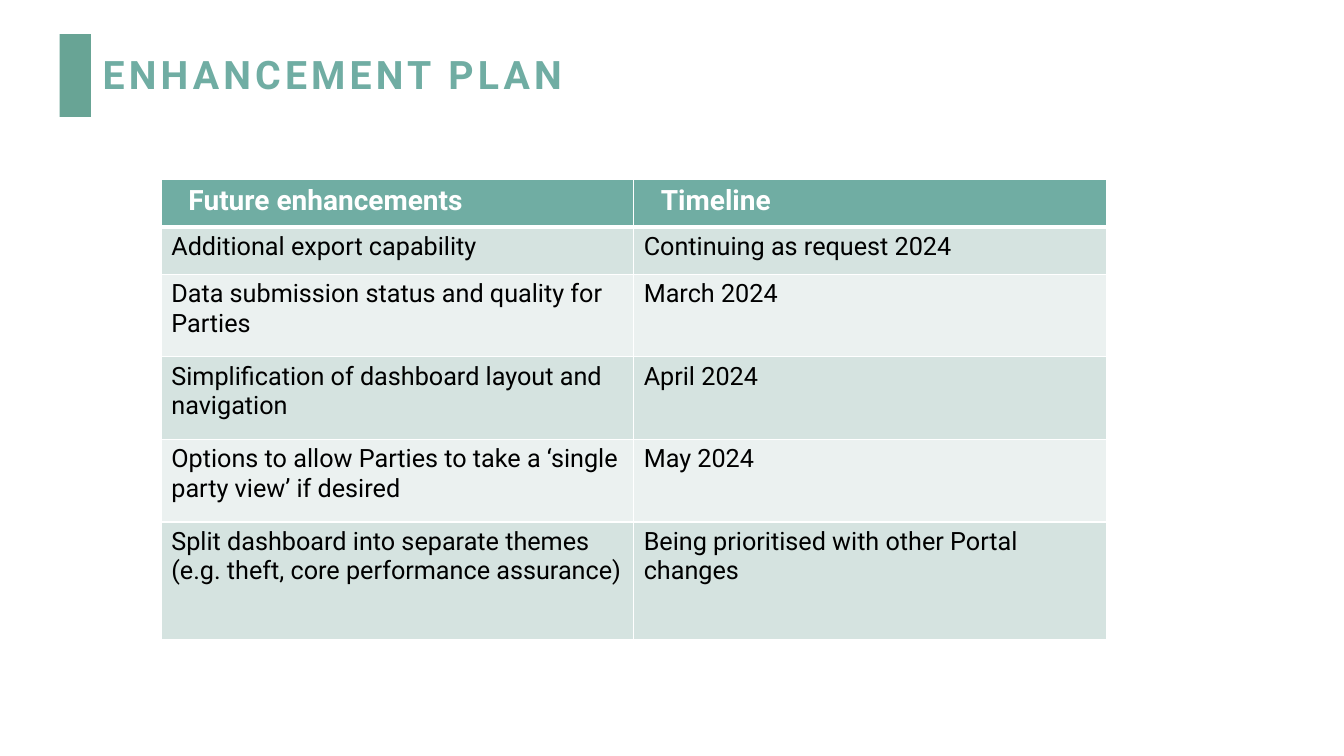
from dataclasses import dataclass
from typing import Any

from lxml import etree
from pptx import Presentation
from pptx import util as u
from pptx.dml.color import RGBColor
from pptx.enum import shapes, text
from pptx.oxml import ns

WIDTH, HEIGHT = u.Inches(13.33), u.Inches(7.5)
FONT = "Roboto"
BAR_GREEN = RGBColor(0x68, 0xA4, 0x95)
GREEN = RGBColor(0x70, 0xAD, 0xA3)
DARK_BAND = RGBColor(0xD5, 0xE3, 0xE0)
LIGHT_BAND = RGBColor(0xEB, 0xF1, 0xF0)
WHITE = RGBColor(0xFF, 0xFF, 0xFF)
BLACK = RGBColor(0x00, 0x00, 0x00)


@dataclass(frozen=True)
class Area:
    left: float
    top: float
    width: float
    height: float

    def lengths(self) -> tuple[u.Emu, u.Emu, u.Emu, u.Emu]:
        return across(self.left), down(self.top), across(self.width), down(self.height)


@dataclass(frozen=True)
class Style:
    size: float
    color: RGBColor
    bold: bool


@dataclass(frozen=True)
class Enhancement:
    name: str
    timeline: str
    height: float


TITLE = Style(28, GREEN, True)
HEADING = Style(20, WHITE, True)
BODY = Style(18, BLACK, False)

BAR_AREA = Area(4.43, 4.53, 2.33, 10.93)
TITLE_AREA = Area(6.9, 5.33, 76.14, 9.6)
ROWS = [
    Enhancement("Future enhancements", "Timeline", 6.27),
    Enhancement("Additional export capability", "Continuing as request 2024", 6.27),
    Enhancement("Data submission status and quality for Parties", "March 2024", 10.93),
    Enhancement("Simplification of dashboard layout and navigation", "April 2024", 10.93),
    Enhancement("Options to allow Parties to take a ‘single party view’ if desired", "May 2024", 10.93),
    Enhancement("Split dashboard into separate themes (e.g. theft, core performance assurance)",
                "Being prioritised with other Portal changes", 15.6),
]
TABLE_AREA = Area(12, 23.73, 70.3, sum(row.height for row in ROWS))


def across(percent: float) -> u.Emu:
    return u.Emu(round(WIDTH * percent / 100))


def down(percent: float) -> u.Emu:
    return u.Emu(round(HEIGHT * percent / 100))


def add_span(para: Any, words: str, style: Style) -> Any:
    span = para.add_run()
    span.text = words
    span.font.name = FONT
    span.font.size = u.Pt(style.size)
    span.font.bold = style.bold
    span.font.color.rgb = style.color
    return span


def add_bar(page: Any) -> None:
    bar = page.shapes.add_shape(shapes.MSO_SHAPE.RECTANGLE, *BAR_AREA.lengths())
    bar.shadow.inherit = False
    bar.fill.solid()
    bar.fill.fore_color.rgb = BAR_GREEN
    bar.line.fill.background()


def add_title(page: Any) -> None:
    box = page.shapes.add_textbox(*TITLE_AREA.lengths())
    box.text_frame.word_wrap = True
    box.text_frame.vertical_anchor = text.MSO_ANCHOR.MIDDLE
    para = box.text_frame.paragraphs[0]
    para.line_spacing = 0.9
    span = add_span(para, "ENHANCEMENT PLAN", TITLE)
    span.font._element.set("spc", "300")


def set_borders(cell: Any, bottom: float) -> None:
    properties = cell._tc.get_or_add_tcPr()
    for side, points in (("L", 1), ("R", 1), ("T", 1), ("B", bottom)):
        line = etree.SubElement(properties, ns.qn(f"a:ln{side}"), w=str(u.Pt(points)))
        fill = etree.SubElement(line, ns.qn("a:solidFill"))
        etree.SubElement(fill, ns.qn("a:srgbClr"), val=str(WHITE))


def fill_cell(cell: Any, words: str, row: int) -> None:
    heading = row == 0
    set_borders(cell, 3 if heading else 1)
    cell.fill.solid()
    cell.fill.fore_color.rgb = GREEN if heading else DARK_BAND if row % 2 else LIGHT_BAND
    para = cell.text_frame.paragraphs[0]
    if heading:
        cell.margin_left = cell.margin_right = u.Inches(0.07)
        cell.margin_top = cell.margin_bottom = 0
        para.line_spacing = 1.15
        para.space_after = u.Pt(6)
        indents = para._p.get_or_add_pPr()
        indents.set("marL", str(u.Inches(0.45)))
        indents.set("indent", str(u.Inches(-0.25)))
    add_span(para, words, HEADING if heading else BODY)


def add_plan(page: Any) -> None:
    table = page.shapes.add_table(len(ROWS), 2, *TABLE_AREA.lengths()).table
    table.horz_banding = False
    for column in table.columns:
        column.width = across(TABLE_AREA.width / 2)
    for index, row in enumerate(ROWS):
        table.rows[index].height = down(row.height)
        for column, words in enumerate((row.name, row.timeline)):
            fill_cell(table.cell(index, column), words, index)


def main() -> None:
    deck = Presentation()
    deck.slide_width, deck.slide_height = WIDTH, HEIGHT
    page = deck.slides.add_slide(deck.slide_layouts[6])
    add_bar(page)
    add_title(page)
    add_plan(page)
    deck.save("out.pptx")


if __name__ == "__main__":
    main()
